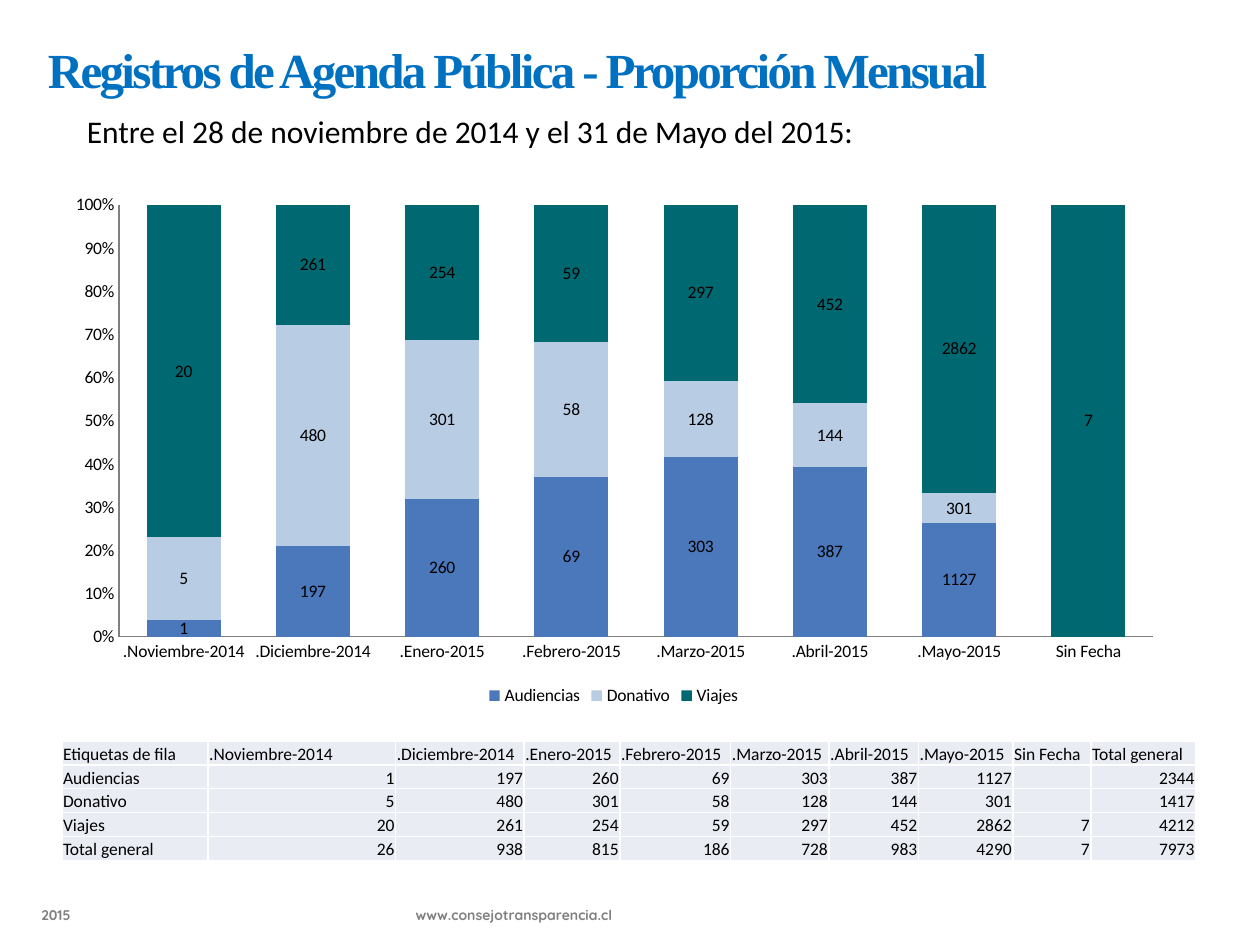
from dataclasses import dataclass

from lxml.etree import SubElement
from pptx import Presentation
from pptx.chart.data import CategoryChartData
from pptx.dml.color import RGBColor
from pptx.enum.chart import XL_CHART_TYPE, XL_LABEL_POSITION, XL_LEGEND_POSITION, XL_TICK_MARK
from pptx.enum.text import MSO_ANCHOR, MSO_AUTO_SIZE, PP_ALIGN
from pptx.oxml import parse_xml
from pptx.oxml.ns import nsdecls, qn
from pptx.util import Inches, Pt


@dataclass(frozen=True)
class Theme:
    heading: str = "0070C0"
    ink: str = "000000"
    muted: str = "808080"
    cell: str = "E9ECF3"
    border: str = "FFFFFF"
    series: tuple = ("4A78BB", "B8CCE4", "006871")
    heading_font: str = "Times New Roman"
    body_font: str = "Calibri"
    footer_font: str = "Quicksand"
    heading_size: int = 28
    period_size: int = 18
    data_size: int = 10
    footer_size: int = 8


theme = Theme()
deck = Presentation()
deck.slide_width, deck.slide_height = Inches(10), Inches(7.5)
column, row = deck.slide_width / 100, deck.slide_height / 100


def place(left, top, width, height):
    return int(left * column), int(top * row), int(width * column), int(height * row)


def write(paragraph, text, font, size, color, bold=False):
    run = paragraph.add_run()
    run.text = text
    run.font.name, run.font.size, run.font.bold = font, Pt(size), bold
    run.font.color.rgb = RGBColor.from_string(color)
    return run


months = [".Noviembre-2014", ".Diciembre-2014", ".Enero-2015", ".Febrero-2015",
          ".Marzo-2015", ".Abril-2015", ".Mayo-2015", "Sin Fecha"]
records = {
    "Audiencias": [1, 197, 260, 69, 303, 387, 1127, None],
    "Donativo": [5, 480, 301, 58, 128, 144, 301, None],
    "Viajes": [20, 261, 254, 59, 297, 452, 2862, 7],
}

slide = deck.slides.add_slide(deck.slide_layouts[5])

footer = slide.shapes.add_textbox(*place(2.3, 95.33, 97.7, 4.67)).text_frame
footer.word_wrap = True
footer_line = footer.paragraphs[0]
tabs = SubElement(footer_line._p.get_or_add_pPr(), qn("a:tabLst"))
SubElement(tabs, qn("a:tab"), pos=str(int(29.7 * column)), algn="l")
write(footer_line, "2015\twww.consejotransparencia.cl",
      theme.footer_font, theme.footer_size, theme.muted, True)

period = slide.shapes.add_textbox(*place(5.9, 11.2, 81.1, 5.33)).text_frame
period.word_wrap = True
period.paragraphs[0].alignment = PP_ALIGN.JUSTIFY
write(period.paragraphs[0], "Entre el 28 de noviembre de 2014 y el 31 de Mayo del 2015:",
      theme.body_font, theme.period_size, theme.ink)

title = slide.shapes.title
title.left, title.top, title.width, title.height = place(2.8, 3.47, 92.1, 7.6)
heading = title.text_frame
heading.word_wrap, heading.auto_size = True, MSO_AUTO_SIZE.NONE
heading.vertical_anchor = MSO_ANCHOR.TOP
heading.paragraphs[0].alignment = PP_ALIGN.LEFT
heading_run = write(heading.paragraphs[0], "Registros de Agenda Pública - Proporción Mensual",
                    theme.heading_font, theme.heading_size, theme.heading, True)
heading_run.font._element.set("spc", "-150")

month_totals = [sum(value or 0 for value in month) for month in zip(*records.values())]
summary = [["Etiquetas de fila", *months, "Total general"]]
for name, counts in [*records.items(), ("Total general", month_totals)]:
    summary.append([name, *counts, sum(value or 0 for value in counts)])

column_shares = [11.6, 14.9, 10.2, 7.6, 8.8, 7.8, 7.1, 7.5, 6.2, 8.3]
table = slide.shapes.add_table(len(summary), len(column_shares),
                               *place(4.9, 78.4, 90, 12.67)).table
for table_column, share in zip(table.columns, column_shares):
    table_column.width = int(share * column)
for r, entries in enumerate(summary):
    for c, entry in enumerate(entries):
        cell = table.cell(r, c)
        cell.margin_left = cell.margin_right = cell.margin_top = Inches(0.01)
        cell.margin_bottom = 0
        cell.vertical_anchor = MSO_ANCHOR.BOTTOM
        for side in ("lnL", "lnR", "lnT", "lnB"):
            cell._tc.get_or_add_tcPr().append(parse_xml(
                f'<a:{side} {nsdecls("a")} w="12700"><a:solidFill>'
                f'<a:srgbClr val="{theme.border}"/></a:solidFill></a:{side}>'))
        cell.fill.solid()
        cell.fill.fore_color.rgb = RGBColor.from_string(theme.cell)
        line = cell.text_frame.paragraphs[0]
        if entry is None:
            SubElement(line._p, qn("a:endParaRPr"), sz=str(theme.data_size * 100))
            continue
        line.alignment = PP_ALIGN.RIGHT if r and c else PP_ALIGN.LEFT
        write(line, str(entry), theme.body_font, theme.data_size, theme.ink)

proportions = CategoryChartData()
proportions.categories = months
for name, counts in records.items():
    proportions.add_series(name, counts)
chart = slide.shapes.add_chart(XL_CHART_TYPE.COLUMN_STACKED_100,
                               *place(4.1, 19.47, 89.2, 55.73), proportions).chart
chart.has_title = False
chart.font.name, chart.font.size = theme.body_font, Pt(theme.data_size)
chart.font.color.rgb = RGBColor.from_string(theme.ink)
chart.has_legend = True
chart.legend.position = XL_LEGEND_POSITION.BOTTOM
chart.legend.include_in_layout = False
for axis in (chart.category_axis, chart.value_axis):
    axis.major_tick_mark = axis.minor_tick_mark = XL_TICK_MARK.NONE
    axis.has_major_gridlines = False
    axis.format.line.color.rgb = RGBColor.from_string(theme.muted)
    axis.format.line.width = Pt(0.75)
chart.value_axis.tick_labels.number_format = "0%"
chart.value_axis.tick_labels.number_format_is_linked = False

bars = chart.plots[0]
bars.gap_width, bars.overlap, bars.vary_by_categories = 75, 100, False
for series, color in zip(bars.series, theme.series):
    series.format.fill.solid()
    series.format.fill.fore_color.rgb = RGBColor.from_string(color)
    series.data_labels.show_value = True
    series.data_labels.position = XL_LABEL_POSITION.CENTER

plot_area = chart._chartSpace.chart.plotArea
for automatic in plot_area.findall(qn("c:layout")):
    plot_area.remove(automatic)
plot_layout = parse_xml(f'<c:layout {nsdecls("c")}><c:manualLayout/></c:layout>')
for tag, value in [("layoutTarget", "inner"), ("xMode", "edge"), ("yMode", "edge"),
                   ("x", "0.06"), ("y", "0.04"), ("w", "0.92"), ("h", "0.82")]:
    SubElement(plot_layout[0], qn(f"c:{tag}"), val=value)
plot_area.insert(0, plot_layout)

deck.save("out.pptx")
